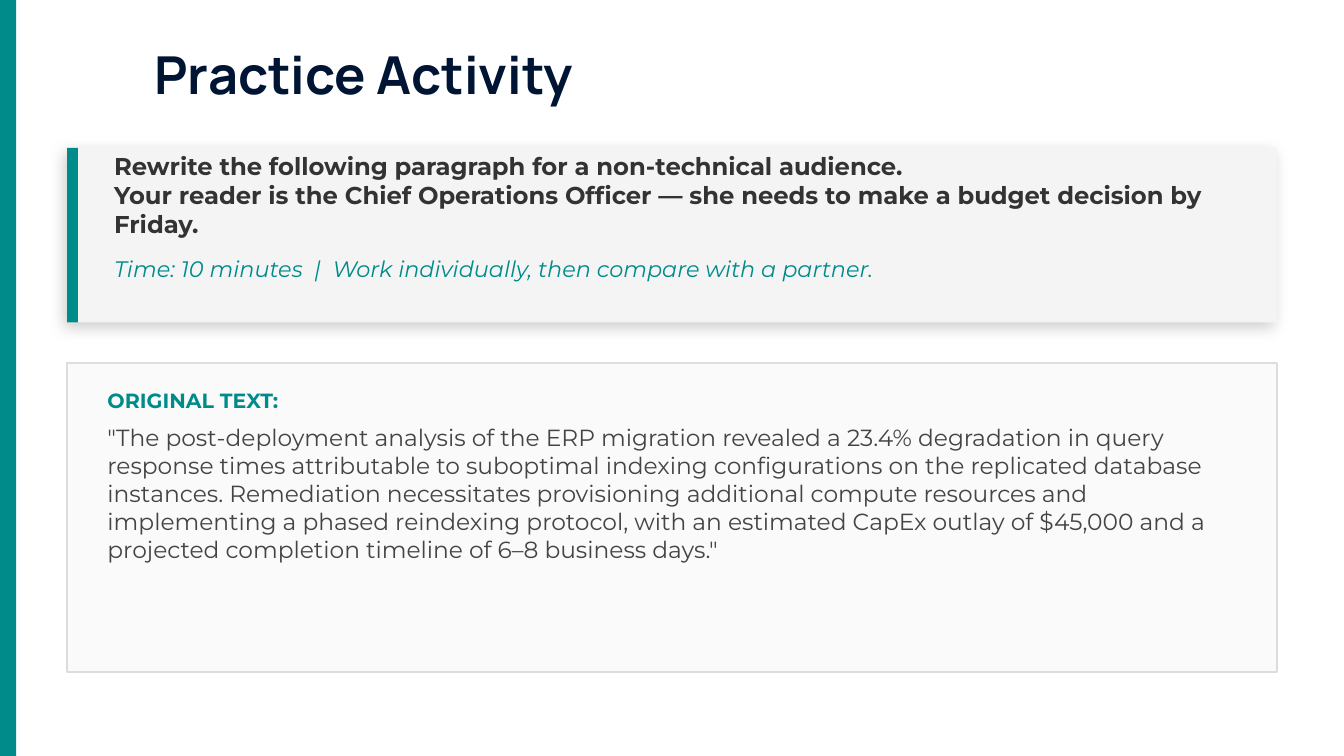
from lxml import etree
from pptx import Presentation, util as u
from pptx.dml.color import RGBColor
from pptx.enum import shapes, text
from pptx.oxml.ns import qn

COLS, ROWS = 100, 56.25
UNIT = u.Inches(0.1)

THEME = {
    "teal": "008B8B", "navy": "001434", "card": "F4F4F4", "paper": "FAFAFA",
    "border": "DDDDDD", "shadow": "000000",
    "title": {"name": "Manrope", "size": 28, "bold": True, "color": "001434"},
    "task": {"name": "Montserrat", "size": 13, "bold": True, "color": "333333"},
    "timing": {"name": "Montserrat", "size": 12, "italic": True, "color": "008B8B"},
    "label": {"name": "Montserrat", "size": 11, "bold": True, "color": "008B8B"},
    "passage": {"name": "Montserrat", "size": 12.5, "color": "444444"},
}

MARGIN = 5
CARD = (MARGIN, 11, COLS - 2 * MARGIN, 13)
PAPER = (MARGIN, 27, COLS - 2 * MARGIN, 23)

PANELS = [
    {"at": (0, 0, 1.2, ROWS), "fill": "teal"},
    {"at": CARD, "fill": "card", "shadow": {"alpha": 18, "blur": 8, "dist": 3, "angle": 135}},
    {"at": (*CARD[:2], 0.8, CARD[3]), "fill": "teal"},
    {"at": PAPER, "fill": "paper", "line": "border"},
]

TEXTS = [
    ("title", (11.5, 3, 50, 5), "middle", ["Practice Activity"]),
    ("task", (CARD[0] + 3.5, CARD[1], 84, 7), "middle", [
        "Rewrite the following paragraph for a non-technical audience.",
        "Your reader is the Chief Operations Officer — she needs to make a budget "
        "decision by Friday.",
    ]),
    ("timing", (CARD[0] + 3.5, CARD[1] + 7, 84, 4), "middle", [
        "Time: 10 minutes  |  Work individually, then compare with a partner.",
    ]),
    ("label", (PAPER[0] + 3, PAPER[1] + 1, 30, 3.5), "middle", ["ORIGINAL TEXT:"]),
    ("passage", (PAPER[0] + 3, PAPER[1] + 4.5, 84, 17), "top", [
        '"The post-deployment analysis of the ERP migration revealed a 23.4% degradation '
        "in query response times attributable to suboptimal indexing configurations on "
        "the replicated database instances. Remediation necessitates provisioning "
        "additional compute resources and implementing a phased reindexing protocol, "
        "with an estimated CapEx outlay of $45,000 and a projected completion timeline "
        'of 6–8 business days."',
    ]),
]


def place(at):
    return [round(n * UNIT) for n in at]


def rgb(name):
    return RGBColor.from_string(THEME.get(name, name))


def add_shadow(sp, alpha, blur, dist, angle):
    effects = sp._element.spPr.find(qn("a:effectLst"))
    outer = etree.SubElement(effects, qn("a:outerShdw"), {
        "blurRad": str(u.Pt(blur)), "dist": str(u.Pt(dist)),
        "dir": str(angle * 60000), "algn": "bl", "rotWithShape": "0",
    })
    color = etree.SubElement(outer, qn("a:srgbClr"), val=THEME["shadow"])
    etree.SubElement(color, qn("a:alpha"), val=str(alpha * 1000))


def add_panel(s, at, fill, line=None, shadow=None):
    sp = s.shapes.add_shape(shapes.MSO_SHAPE.RECTANGLE, *place(at))
    sp.shadow.inherit = False
    sp.fill.solid()
    sp.fill.fore_color.rgb = rgb(fill)
    if line:
        sp.line.color.rgb = rgb(line)
        sp.line.width = u.Pt(1)
    else:
        sp.line.fill.background()
    if shadow:
        add_shadow(sp, **shadow)


def add_text(s, style, at, anchor, lines):
    tf = s.shapes.add_textbox(*place(at)).text_frame
    frame = {"word_wrap": True, "vertical_anchor": text.MSO_ANCHOR[anchor.upper()]}
    frame.update({f"margin_{side}": 0 for side in ("left", "top", "right", "bottom")})
    for key, value in frame.items():
        setattr(tf, key, value)
    for i, line in enumerate(lines):
        p = tf.add_paragraph() if i else tf.paragraphs[0]
        r = p.add_run()
        r.text = line
        for key, value in THEME[style].items():
            if key == "color":
                r.font.color.rgb = rgb(value)
            else:
                setattr(r.font, key, u.Pt(value) if key == "size" else value)


def main():
    prs = Presentation()
    prs.slide_width, prs.slide_height = place((COLS, ROWS))
    s = prs.slides.add_slide(prs.slide_layouts[6])
    for panel in PANELS:
        add_panel(s, **panel)
    for entry in TEXTS:
        add_text(s, *entry)
    prs.save("out.pptx")


if __name__ == "__main__":
    main()
